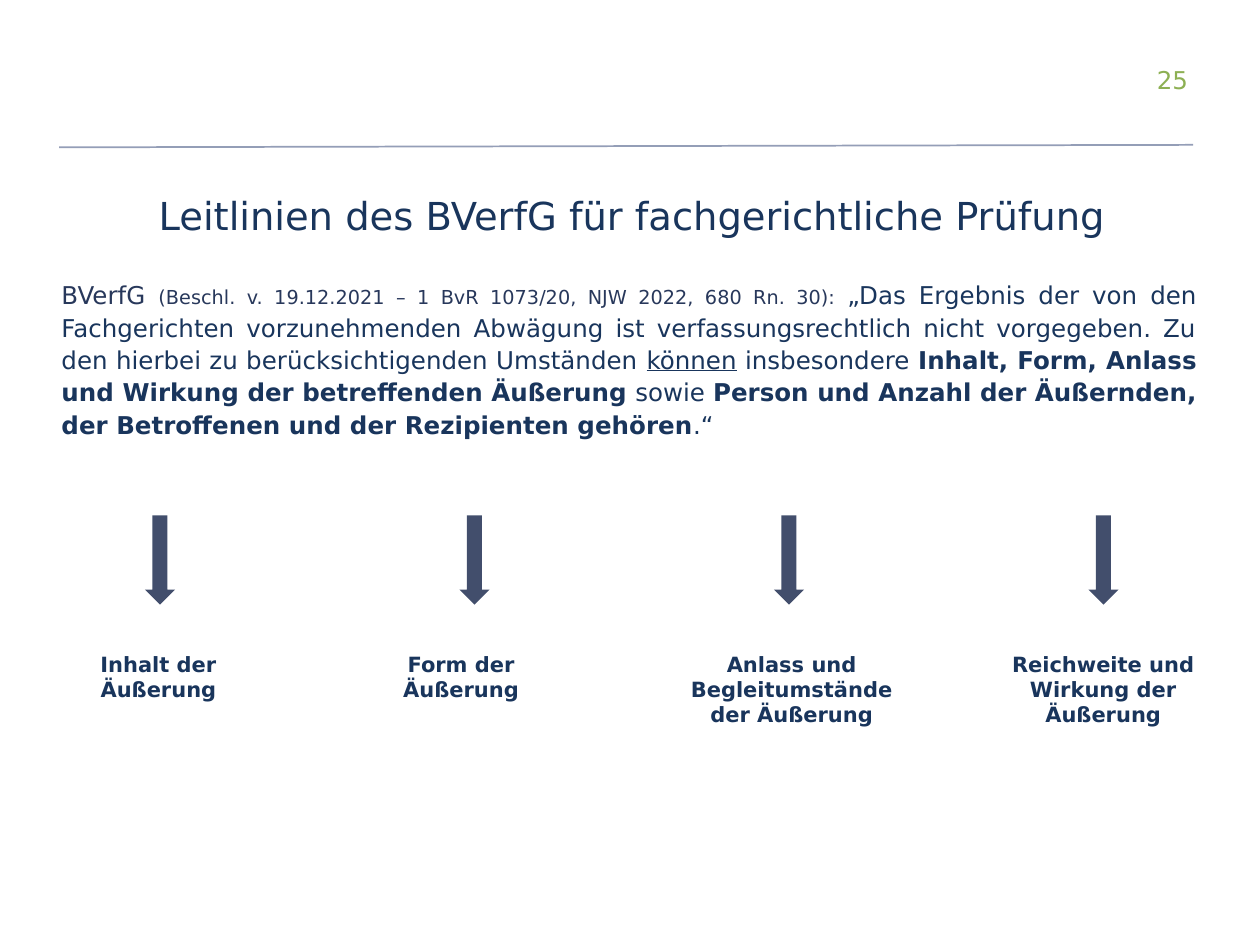
from dataclasses import dataclass

from lxml import etree
from pptx import Presentation
from pptx.dml.color import RGBColor
from pptx.enum import shapes, text
from pptx.oxml import ns
from pptx.util import Cm, Pt


@dataclass(frozen=True)
class Theme:
    font: str = "DejaVu Sans"
    navy: RGBColor = RGBColor(0x19, 0x35, 0x5C)
    slate: RGBColor = RGBColor(0x28, 0x38, 0x5B)
    arrow: RGBColor = RGBColor(0x23, 0x32, 0x54)
    arrow_opacity: int = 86
    rule: RGBColor = RGBColor(0x94, 0x9E, 0xB7)
    green: RGBColor = RGBColor(0x8D, 0xB0, 0x53)
    title_size: Pt = Pt(22)
    body_size: Pt = Pt(14)
    label_size: Pt = Pt(12)
    citation_size: Pt = Pt(11)


@dataclass(frozen=True)
class Box:
    """Position and size in centimetres."""
    left: float
    top: float
    width: float
    height: float

    def lengths(self) -> tuple:
        return Cm(self.left), Cm(self.top), Cm(self.width), Cm(self.height)


@dataclass(frozen=True)
class Criterion:
    caption: str
    left: float
    width: float
    height: float


@dataclass(frozen=True)
class Passage:
    wording: str
    color: RGBColor = Theme.navy
    size: Pt = Theme.body_size
    bold: bool = False
    underline: bool = False


THEME = Theme()
CRITERIA = [
    Criterion("Inhalt der Äußerung", 1.85, 2.69, 1.27),
    Criterion("Form der Äußerung", 7.95, 2.69, 1.27),
    Criterion("Anlass und Begleitumstände der Äußerung", 13.79, 4.34, 2.26),
    Criterion("Reichweite und Wirkung der Äußerung", 20.07, 4.34, 2.26),
]
LABEL_TOP = 13.13
FIRST_ARROW = Box(2.92, 10.39, 0.61, 1.8)
ARROW_PITCH = 6.34
QUOTATION = [
    Passage("BVerfG ", THEME.slate),
    Passage("(Beschl. v. 19.12.2021 – 1 BvR 1073/20, NJW 2022, 680 Rn. 30): ",
            THEME.slate, THEME.citation_size),
    Passage("„Das Ergebnis der von den Fachgerichten vorzunehmenden Abwägung ist "
            "verfassungsrechtlich nicht vorgegeben. Zu den hierbei zu "
            "berücksichtigenden Umständen "),
    Passage("können", underline=True),
    Passage(" insbesondere "),
    Passage("Inhalt, Form, Anlass und Wirkung der betreffenden Äußerung", bold=True),
    Passage(" sowie "),
    Passage("Person und Anzahl der Äußernden, der Betroffenen und der Rezipienten "
            "gehören", bold=True),
    Passage(".“"),
]


def add_text(slide, box: Box, wording: str, size: Pt, color: RGBColor,
             align=text.PP_ALIGN.CENTER, anchor=text.MSO_ANCHOR.TOP,
             bold: bool = False, inset_x: float = 0.25, inset_y: float = 0.13):
    """Add a wrapped one-paragraph text box and return its paragraph."""
    frame = slide.shapes.add_textbox(*box.lengths()).text_frame
    frame.word_wrap = True
    frame.vertical_anchor = anchor
    frame.margin_left = frame.margin_right = Cm(inset_x)
    frame.margin_top = frame.margin_bottom = Cm(inset_y)
    paragraph = frame.paragraphs[0]
    paragraph.text = wording
    paragraph.alignment = align
    paragraph.font.name = THEME.font
    paragraph.font.size = size
    paragraph.font.bold = bold
    paragraph.font.color.rgb = color
    return paragraph


def add_quotation(slide) -> None:
    paragraph = add_text(slide, Box(0.99, 5.46, 23.39, 13.59), "", THEME.body_size,
                         THEME.navy, text.PP_ALIGN.JUSTIFY)
    paragraph.line_spacing = 1.1
    paragraph.space_after = Pt(6)
    for passage in QUOTATION:
        run = paragraph.add_run()
        run.text = passage.wording
        run.font.name = THEME.font
        run.font.size = passage.size
        run.font.bold = passage.bold
        run.font.underline = passage.underline
        run.font.color.rgb = passage.color


def add_header_rule(slide) -> None:
    rule = slide.shapes.add_connector(shapes.MSO_CONNECTOR.STRAIGHT,
                                      Cm(1.19), Cm(2.97), Cm(24.05), Cm(2.92))
    rule.line.color.rgb = THEME.rule
    rule.line.width = Pt(1)
    etree.SubElement(rule.element.spPr, ns.qn("a:effectLst"))


def add_arrow(slide, box: Box) -> None:
    arrow = slide.shapes.add_shape(shapes.MSO_SHAPE.DOWN_ARROW, *box.lengths())
    arrow.shadow.inherit = False
    arrow.fill.solid()
    arrow.fill.fore_color.rgb = THEME.arrow
    arrow.line.fill.background()
    color = arrow.element.spPr.find(ns.qn("a:solidFill"))[0]
    etree.SubElement(color, ns.qn("a:alpha"), val=str(THEME.arrow_opacity * 1000))


def main() -> None:
    presentation = Presentation()
    presentation.slide_width, presentation.slide_height = Cm(25.4), Cm(19.05)
    slide = presentation.slides.add_slide(presentation.slide_layouts[6])

    add_text(slide, Box(18.21, 1.19, 5.99, 0.71), "25", THEME.body_size, THEME.green,
             text.PP_ALIGN.RIGHT, text.MSO_ANCHOR.BOTTOM, inset_y=0)
    add_header_rule(slide)
    add_quotation(slide)
    add_text(slide, Box(1.04, 3.53, 23.39, 1.6),
             "Leitlinien des BVerfG für fachgerichtliche Prüfung",
             THEME.title_size, THEME.navy, anchor=text.MSO_ANCHOR.MIDDLE)
    for index, criterion in enumerate(CRITERIA):
        add_arrow(slide, Box(FIRST_ARROW.left + index * ARROW_PITCH, FIRST_ARROW.top,
                             FIRST_ARROW.width, FIRST_ARROW.height))
        add_text(slide, Box(criterion.left, LABEL_TOP, criterion.width, criterion.height),
                 criterion.caption, THEME.label_size, THEME.navy, bold=True,
                 inset_x=0, inset_y=0)

    presentation.save("out.pptx")


if __name__ == "__main__":
    main()
